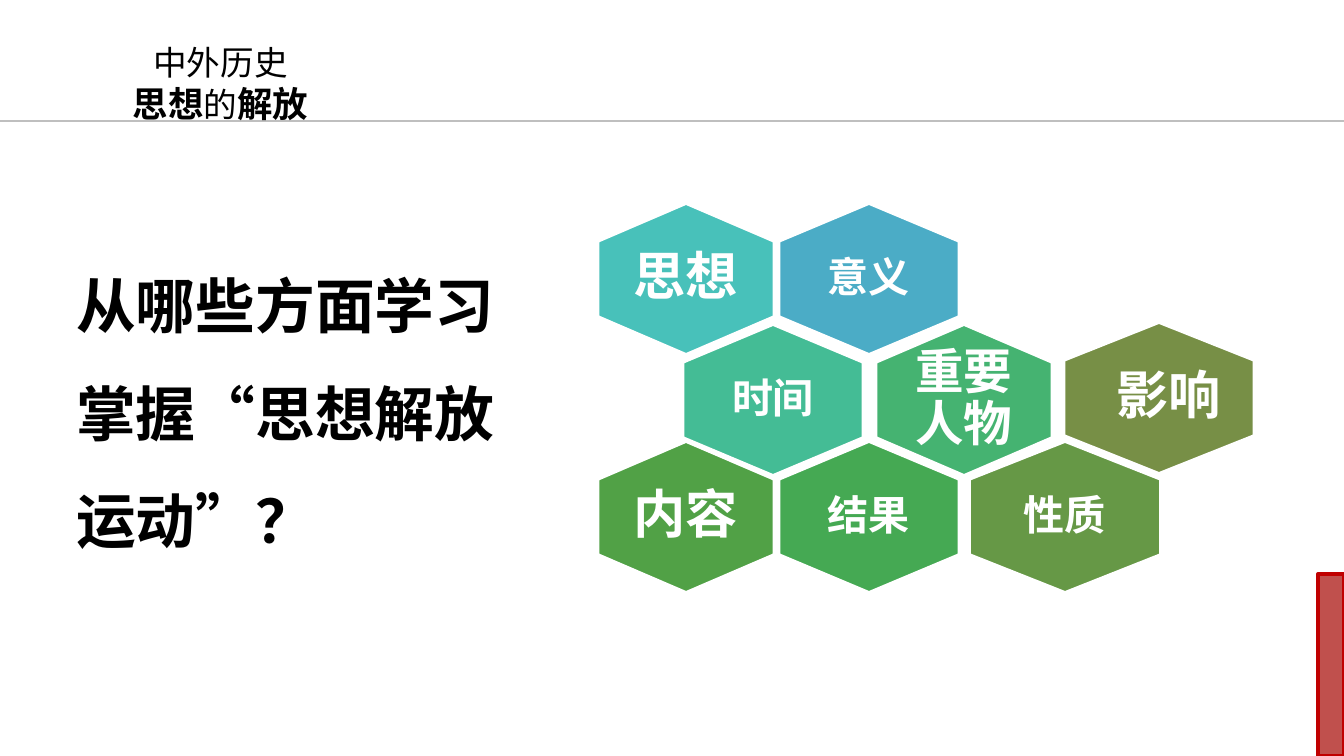
from dataclasses import dataclass

from lxml.etree import SubElement
from pptx import Presentation
from pptx.dml.color import RGBColor
from pptx.enum.shapes import MSO_CONNECTOR, MSO_SHAPE
from pptx.enum.text import MSO_ANCHOR, MSO_AUTO_SIZE, PP_ALIGN
from pptx.oxml.ns import qn
from pptx.shapes.base import BaseShape
from pptx.slide import Slide
from pptx.text.text import TextFrame, _Paragraph
from pptx.util import Emu, Pt

FONT = "Calibri"
EMU_PER_PX = 914400 / 134.4
SLIDE_WIDTH, SLIDE_HEIGHT = 1344, 756
CELL_HEIGHT = 152
LABEL_HEIGHT = 105
LABEL_SHARE = 0.69
TOP_ROW, MIDDLE_ROW, BOTTOM_ROW = 279, 400, 517


@dataclass(frozen=True)
class Aspect:
    """One honeycomb cell, placed by its centre."""
    label: str
    x: int
    y: int
    width: int
    fill: str
    size: int
    inset: int = 0
    label_shift: int = 0


ASPECTS = [
    Aspect("意义", 869, TOP_ROW, 181, "4BACC6", 22, inset=15),
    Aspect("思想", 686, TOP_ROW, 177, "48C1BA", 28),
    Aspect("时间", 773, MIDDLE_ROW, 181, "44BC95", 22, inset=15),
    Aspect("重要人物", 964, MIDDLE_ROW, 177, "45B371", 26),
    Aspect("结果", 869, BOTTOM_ROW, 181, "45A953", 22, inset=15),
    Aspect("内容", 686, BOTTOM_ROW, 177, "51A146", 28),
    Aspect("性质", 1065, BOTTOM_ROW, 192, "669846", 22, inset=15),
    Aspect("影响", 1159, MIDDLE_ROW - 2, 191, "778F46", 28, label_shift=10),
]


def px(length: float) -> Emu:
    return Emu(round(length * EMU_PER_PX))


def centred(x: float, y: float, width: float, height: float) -> tuple[Emu, ...]:
    """Left, top, width and height of a box around a centre."""
    return px(x - width / 2), px(y - height / 2), px(width), px(height)


def colour(hex_value: str) -> RGBColor:
    return RGBColor.from_string(hex_value)


def add_run(paragraph: _Paragraph, text: str, size: int, ink: str = "000000",
            bold: bool = False) -> None:
    run = paragraph.add_run()
    run.text = text
    run.font.name = FONT
    run.font.size = Pt(size)
    run.font.bold = bold
    run.font.color.rgb = colour(ink)


def set_frame(frame: TextFrame, anchor: MSO_ANCHOR, across: int, down: int) -> None:
    frame.word_wrap = True
    frame.auto_size = MSO_AUTO_SIZE.NONE
    frame.vertical_anchor = anchor
    frame.margin_left = frame.margin_right = px(across)
    frame.margin_top = frame.margin_bottom = px(down)


def paint(shape: BaseShape, fill: str, outline: str) -> None:
    shape.shadow.inherit = False
    shape.fill.solid()
    shape.fill.fore_color.rgb = colour(fill)
    shape.line.color.rgb = colour(outline)
    shape.line.width = Pt(2)


def add_question(slide: Slide) -> None:
    question = slide.shapes.title
    question.left, question.top = px(63), px(227)
    question.width, question.height = px(456), px(398)
    set_frame(question.text_frame, MSO_ANCHOR.TOP, 13, 6)
    paragraph = question.text_frame.paragraphs[0]
    paragraph.alignment = PP_ALIGN.LEFT
    paragraph.line_spacing = 1.5
    add_run(paragraph, "从哪些方面学习掌握“思想解放运动”？", 32, bold=True)


def add_header_rule(slide: Slide) -> None:
    rule = slide.shapes.add_connector(
        MSO_CONNECTOR.STRAIGHT, 0, px(121), px(SLIDE_WIDTH), px(121))
    rule.line.color.rgb = colour("BFBFBF")
    rule.line.width = Pt(0.75)
    SubElement(rule._element.spPr, qn("a:effectLst"))


def add_corner_bar(slide: Slide) -> None:
    bar = slide.shapes.add_shape(
        MSO_SHAPE.RECTANGLE, px(1318), px(574), px(26), px(182))
    paint(bar, "C0504D", "C00000")


def add_aspect(slide: Slide, aspect: Aspect) -> None:
    group = slide.shapes.add_group_shape()
    # The hexagon stands on its point, so its sides swap before the turn.
    cell = group.shapes.add_shape(
        MSO_SHAPE.HEXAGON,
        *centred(aspect.x, aspect.y, CELL_HEIGHT, aspect.width))
    cell.rotation = 90
    cell.adjustments[0] = 0.25
    paint(cell, aspect.fill, "FFFFFF")

    label = group.shapes.add_textbox(
        *centred(aspect.x + aspect.label_shift, aspect.y,
                 aspect.width * LABEL_SHARE, LABEL_HEIGHT))
    set_frame(label.text_frame, MSO_ANCHOR.MIDDLE, aspect.inset, aspect.inset)
    paragraph = label.text_frame.paragraphs[0]
    paragraph.alignment = PP_ALIGN.CENTER
    paragraph.line_spacing = 0.9
    paragraph.space_after = Pt(round(aspect.size * 0.35))
    add_run(paragraph, aspect.label, aspect.size, "FFFFFF", bold=True)


def add_course_name(slide: Slide) -> None:
    course = slide.shapes.add_textbox(px(90), px(36), px(261), px(95))
    set_frame(course.text_frame, MSO_ANCHOR.TOP, 13, 6)
    subject = course.text_frame.paragraphs[0]
    topic = course.text_frame.add_paragraph()
    subject.alignment = topic.alignment = PP_ALIGN.CENTER
    add_run(subject, "中外历史", 18)
    add_run(topic, "思想", 19, bold=True)
    add_run(topic, "的", 18)
    add_run(topic, "解放", 19, bold=True)


def main() -> None:
    deck = Presentation()
    deck.slide_width, deck.slide_height = px(SLIDE_WIDTH), px(SLIDE_HEIGHT)
    slide = deck.slides.add_slide(deck.slide_layouts.get_by_name("Title Only"))
    add_question(slide)
    add_header_rule(slide)
    add_corner_bar(slide)
    for aspect in ASPECTS:
        add_aspect(slide, aspect)
    add_course_name(slide)
    deck.save("out.pptx")


if __name__ == "__main__":
    main()
